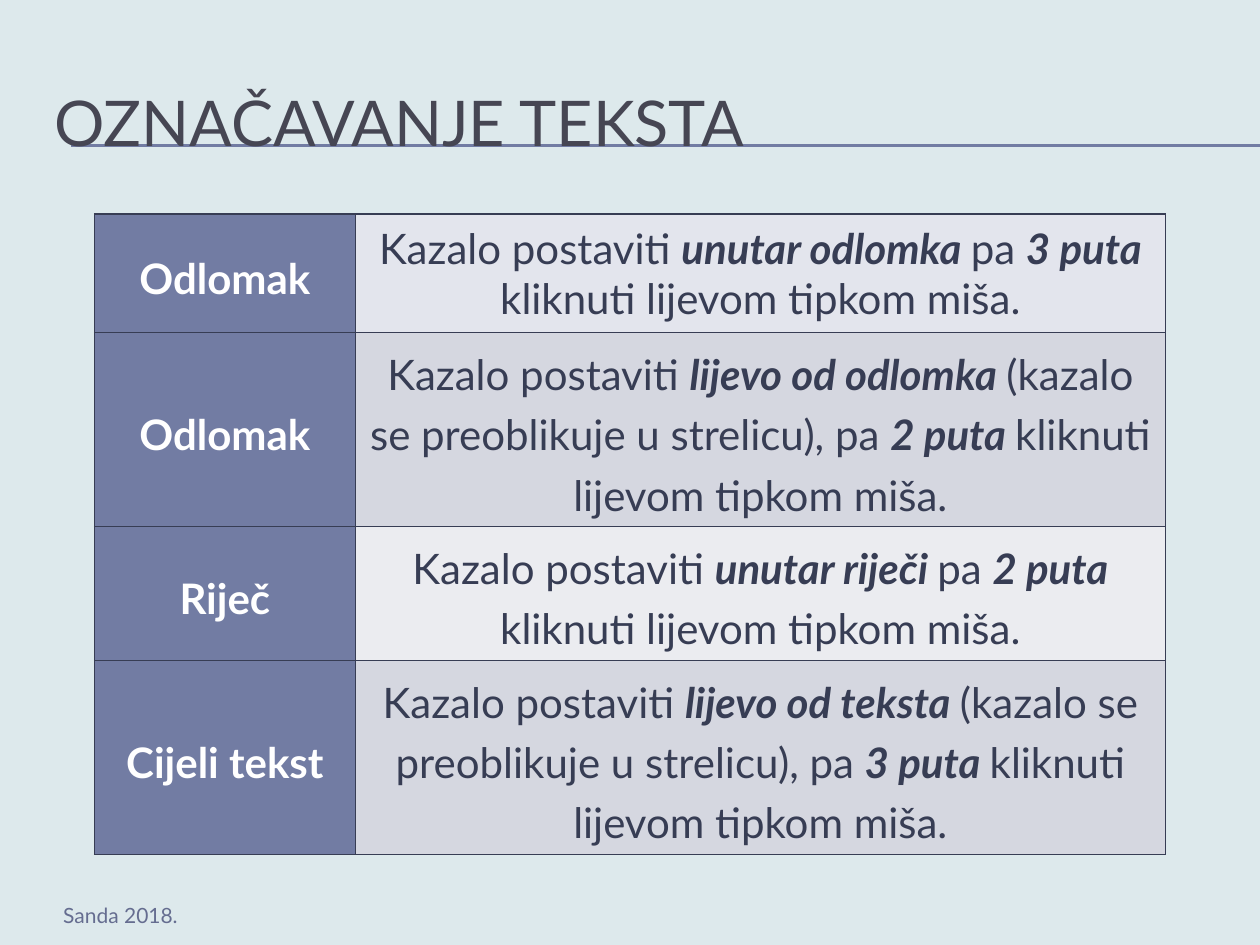
import pptx
import pptx.util
import pptx.dml.color
import pptx.enum.shapes
import pptx.enum.text
import pptx.oxml

Inches = pptx.util.Inches
Pt = pptx.util.Pt
RGBColor = pptx.dml.color.RGBColor
ALIGN = pptx.enum.text.PP_ALIGN
MIDDLE = pptx.enum.text.MSO_ANCHOR.MIDDLE

PAPER = RGBColor(0xDD, 0xE9, 0xEC)
SLATE = RGBColor(0x72, 0x7C, 0xA3)
TITLE = RGBColor(0x46, 0x46, 0x53)
FOOTER = RGBColor(0x65, 0x6D, 0x90)
NAVY = RGBColor(0x37, 0x3D, 0x54)
WHITE = RGBColor(0xFF, 0xFF, 0xFF)
ICE = RGBColor(0xE3, 0xE5, 0xED)
MIST = RGBColor(0xD5, 0xD7, 0xE0)
PEARL = RGBColor(0xEB, 0xEC, 0xF0)

SPACED = {"space_before": Pt(6), "space_after": Pt(6)}
LOOSE = {"line_spacing": 1.2}
TIGHT = {"margin_left": Inches(0.07), "margin_right": Inches(0.07),
         "margin_top": 0, "margin_bottom": 0}
ROWS = [
    (0.94, ICE, "Odlomak", "Kazalo postaviti *unutar odlomka *pa *3 puta *"
     "kliknuti lijevom tipkom miša."),
    (1.54, MIST, "Odlomak", "Kazalo postaviti *lijevo od odlomka *(kazalo se "
     "preoblikuje u strelicu), pa *2 puta *kliknuti lijevom tipkom miša."),
    (1.06, PEARL, "Riječ", "Kazalo postaviti *unutar riječi *pa *2 puta *"
     "kliknuti lijevom tipkom miša."),
    (1.54, MIST, "Cijeli tekst", "Kazalo postaviti *lijevo od teksta *(kazalo se "
     "preoblikuje u strelicu), pa *3 puta *kliknuti lijevom tipkom miša."),
]


def apply(item, form):
    """Set each value of a format dict on an object."""
    for name, value in form.items():
        setattr(item, name, value)


def write(para, text, size, color, form, bold=False):
    """Write text into a paragraph, with starred parts in bold italic."""
    apply(para, form)
    for i, part in enumerate(text.split("*")):
        run = para.add_run()
        run.text = part
        strong = i % 2 == 1
        apply(run.font, {"name": "Lato", "size": Pt(size),
                         "bold": bold or strong, "italic": strong})
        run.font.color.rgb = color


def place(shape, box):
    """Move a shape to a box of left, top, width and height in inches."""
    apply(shape, dict(zip(("left", "top", "width", "height"), map(Inches, box))))


def add_head(slide, box):
    """Fill the title and draw the double rule behind it."""
    left, top, width, height = box
    title = slide.shapes.title
    place(title, box)
    apply(title.text_frame, {"vertical_anchor": MIDDLE, "word_wrap": True})
    write(title.text_frame.paragraphs[0], "OZNAČAVANJE TEKSTA", 36, TITLE,
          {"alignment": ALIGN.LEFT})
    for drop in (0.65, 0.66):
        y = Inches(top + drop)
        rule = slide.shapes.add_connector(
            pptx.enum.shapes.MSO_CONNECTOR.STRAIGHT,
            Inches(left + 0.23), y, Inches(10), y)
        rule.line.width = Pt(0.75)
        rule.line.color.rgb = SLATE
        rule.element.spPr.append(pptx.oxml.parse_xml(
            f'<a:effectLst {pptx.oxml.ns.nsdecls("a")}/>'))
        title.element.addprevious(rule.element)


def add_edge(cell):
    """Draw a thin line on all four sides of a cell."""
    props = cell._tc.get_or_add_tcPr()
    for side in "LRTB":
        props.append(pptx.oxml.parse_xml(
            f'<a:ln{side} {pptx.oxml.ns.nsdecls("a")} w="{Pt(1)}"><a:solidFill>'
            f'<a:srgbClr val="{NAVY}"/></a:solidFill></a:ln{side}>'))


def add_grid(slide, box):
    """Build the table of selection methods."""
    table = slide.shapes.add_table(len(ROWS), 2, *map(Inches, box)).table
    apply(table, {"first_row": False, "horz_banding": False})
    label = 2.07
    for column, width in zip(table.columns, (label, box[2] - label)):
        column.width = Inches(width)
    for i, (height, shade, name, text) in enumerate(ROWS):
        table.rows[i].height = Inches(height)
        first = i == 0
        parts = ((name, WHITE, SLATE, {**SPACED, **LOOSE}),
                 (text, NAVY, shade, SPACED if first else LOOSE))
        for j, (words, color, fill, form) in enumerate(parts):
            cell = table.cell(i, j)
            apply(cell, {"vertical_anchor": MIDDLE, **(TIGHT if first else {})})
            add_edge(cell)
            cell.fill.solid()
            cell.fill.fore_color.rgb = fill
            write(cell.text_frame.paragraphs[0], words, 24, color,
                  {"alignment": ALIGN.CENTER, **form}, j == 0)


def add_foot(slide, box):
    """Add the footer text."""
    frame = slide.shapes.add_textbox(*map(Inches, box)).text_frame
    frame.word_wrap = True
    write(frame.paragraphs[0], "Sanda 2018.", 12, FOOTER,
          {"alignment": ALIGN.RIGHT})


def main():
    """Build the slide and save it."""
    deck = pptx.Presentation()
    apply(deck, {"slide_width": Inches(10), "slide_height": Inches(7.5)})
    slide = deck.slides.add_slide(deck.slide_layouts[5])
    slide.background.fill.solid()
    slide.background.fill.fore_color.rgb = PAPER
    add_head(slide, (0.33, 0.5, 9.5, 0.92))
    add_foot(slide, (0, 7.11, 1.51, 0.39))
    add_grid(slide, (0.75, 1.7, 8.5, 5.08))
    deck.save("out.pptx")


if __name__ == "__main__":
    main()
